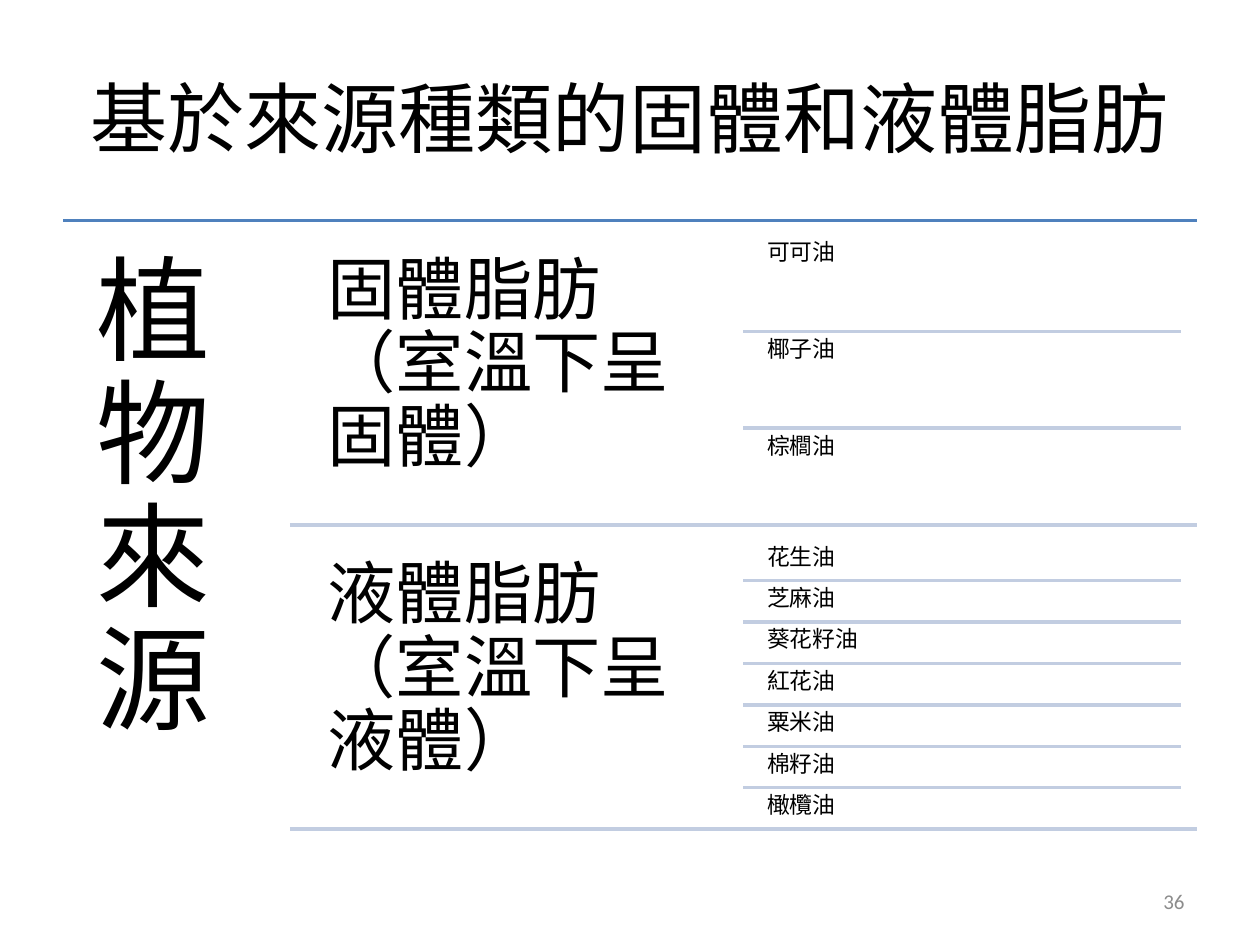
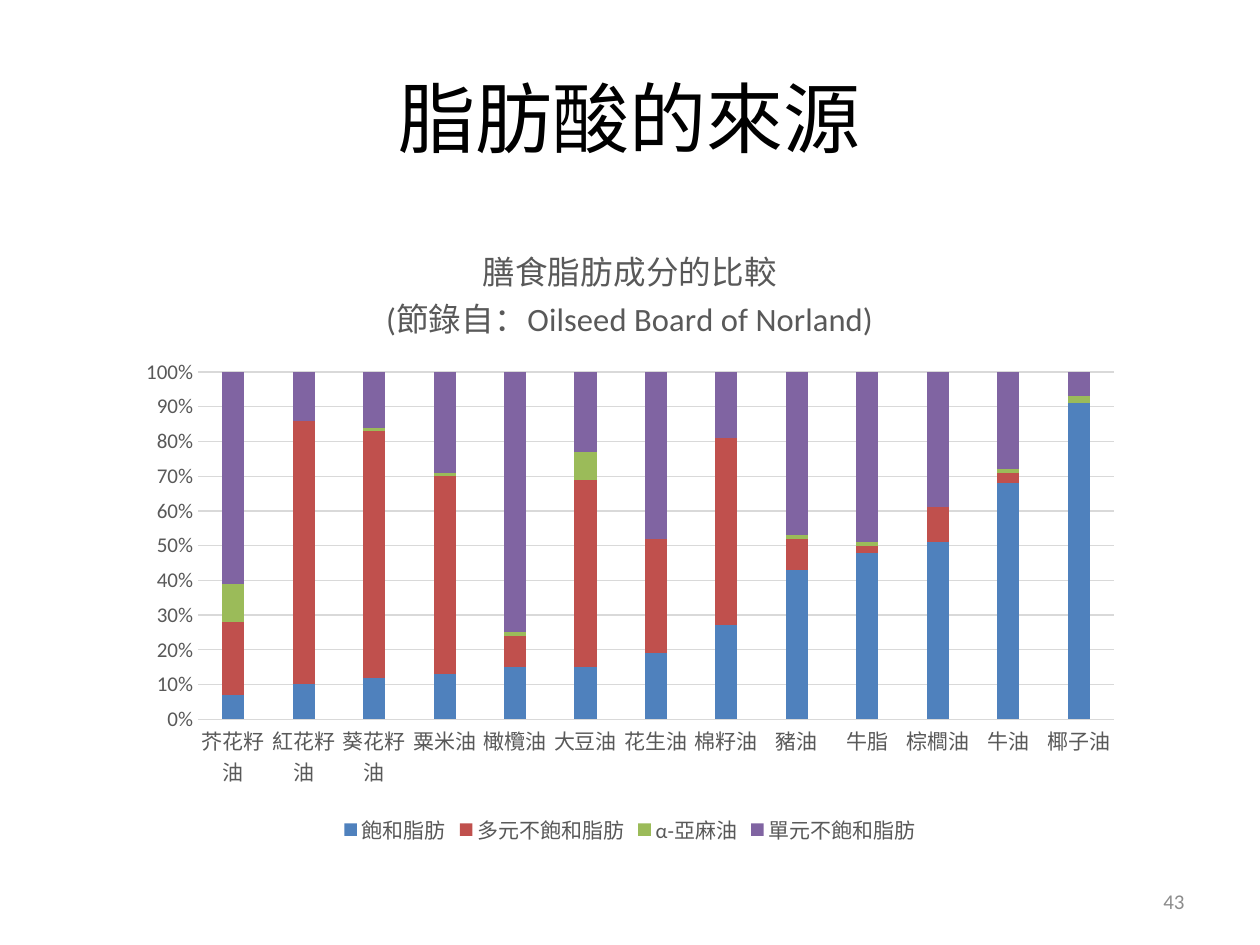
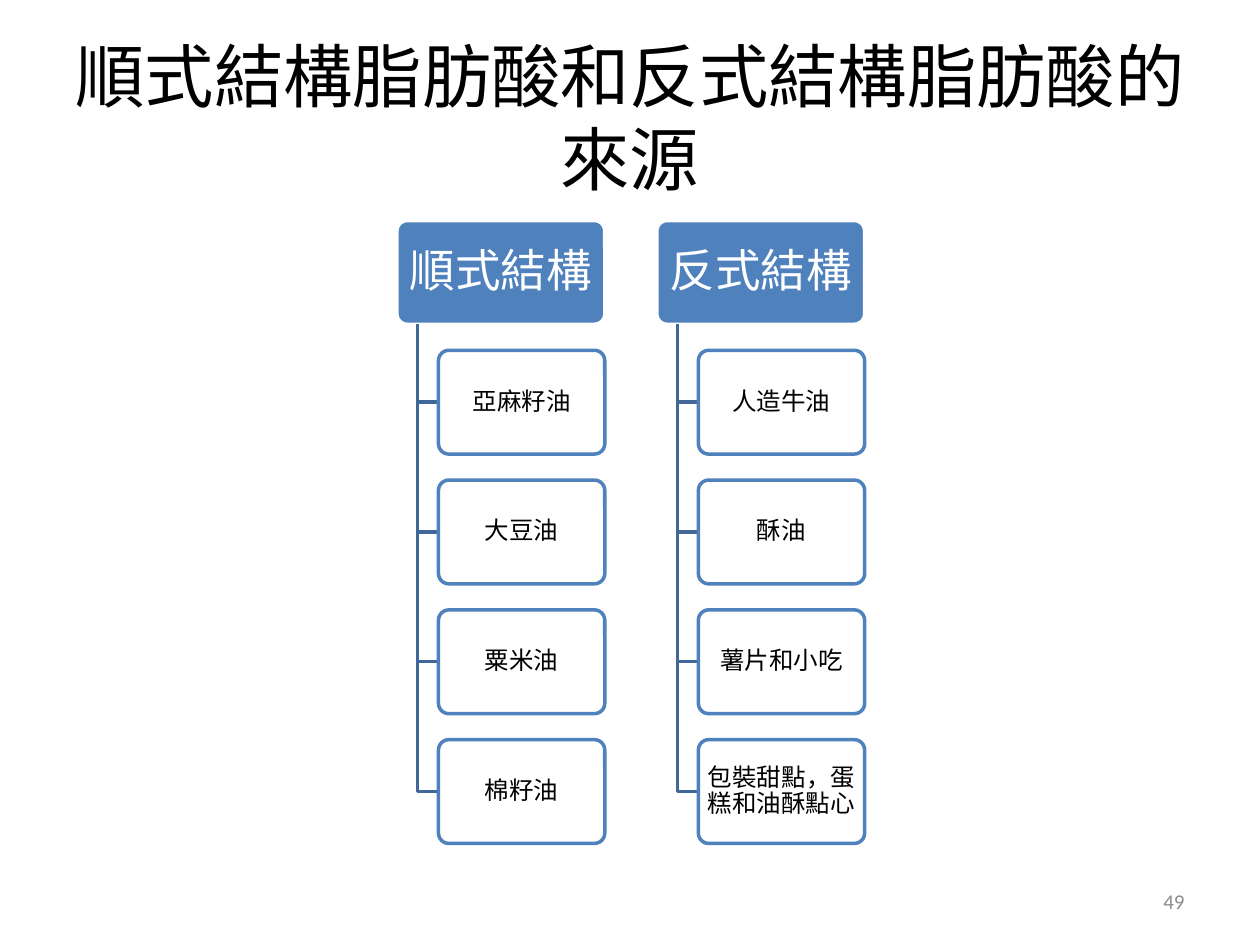
from lxml import etree
from pptx import Presentation
from pptx import util as u
from pptx.chart.data import CategoryChartData
from pptx.dml.color import RGBColor
from pptx.enum import chart as ch, shapes, text
from pptx.oxml.ns import qn

COLORS = {
    "text": "000000", "white": "FFFFFF", "blue": "4F81BD", "pale": "C2CDE1",
    "trunk": "3F6797", "number": "8C8C8C", "chart text": "595959", "grid": "D9D9D9",
    "red": "C0504D", "green": "9BBB59", "purple": "8064A2",
}
FONT = "Calibri"
COLS, ROWS = 100, 75  # cells of 0.1 inch on a 10 by 7.5 inch slide
LEFT, RIGHT, TOP = 5, 95, 17.5  # content margins in cells
LINE_WIDTH = 2
ALIGN, ANCHOR = text.PP_ALIGN, text.MSO_ANCHOR


def rgb(name):
    return RGBColor.from_string(COLORS[name])


def style_font(font, size, color):
    font.name, font.size = FONT, u.Pt(size)
    font.color.rgb = rgb(color)


def style_line(line, color, width=LINE_WIDTH):
    line.color.rgb = rgb(color)
    line.width = u.Pt(width)


class Deck:
    """Holds the presentation, its grid and the current slide."""

    def __init__(self):
        self.prs = Presentation()
        self.prs.slide_width, self.prs.slide_height = u.Inches(10), u.Inches(7.5)
        self.slide = None

    def x(self, cols):
        return round(self.prs.slide_width * cols / COLS)

    def y(self, rows):
        return round(self.prs.slide_height * rows / ROWS)

    def area(self, left, top, width, height):
        return self.x(left), self.y(top), self.x(width), self.y(height)

    def new_slide(self, title, number, title_size=44):
        self.slide = self.prs.slides.add_slide(self.prs.slide_layouts[6])
        self.label((LEFT, 3, RIGHT - LEFT, 12.5), title, title_size,
                   align=ALIGN.CENTER, anchor=ANCHOR.MIDDLE)
        self.label((71.7, 69.5, 23.3, 4), str(number), 12, "number",
                   align=ALIGN.RIGHT, anchor=ANCHOR.MIDDLE)

    def fill_text(self, sp, words, size, color, align, anchor, insets, spacing):
        """Insets are (horizontal, vertical) in inches."""
        tf = sp.text_frame
        tf.text, tf.word_wrap, tf.vertical_anchor = words, True, anchor
        tf.margin_left = tf.margin_right = u.Inches(insets[0])
        tf.margin_top = tf.margin_bottom = u.Inches(insets[1])
        p = tf.paragraphs[0]
        p.alignment, p.line_spacing = align, spacing
        for r in p.runs:
            style_font(r.font, size, color)

    def label(self, area, words, size, color="text", align=ALIGN.LEFT,
              anchor=ANCHOR.TOP, insets=(0.1, 0.05), spacing=1.0):
        sp = self.slide.shapes.add_textbox(*self.area(*area))
        self.fill_text(sp, words, size, color, align, anchor, insets, spacing)

    def rule(self, left, right, row, color="pale"):
        """Horizontal line."""
        line = self.slide.shapes.add_connector(
            shapes.MSO_CONNECTOR.STRAIGHT,
            self.x(left), self.y(row), self.x(right), self.y(row))
        style_line(line.line, color)
        etree.SubElement(line._element.spPr, qn("a:effectLst"))

    def box(self, area, words, size, color, fill, border, insets, opacity=100):
        sp = self.slide.shapes.add_shape(
            shapes.MSO_SHAPE.ROUNDED_RECTANGLE, *self.area(*area))
        sp.adjustments[0] = 0.1
        sp.shadow.inherit = False
        sp.fill.solid()
        sp.fill.fore_color.rgb = rgb(fill)
        if opacity < 100:
            tint = sp._element.spPr.find(qn("a:solidFill"))[0]
            etree.SubElement(tint, qn("a:alpha"), val=str(opacity * 1000))
        style_line(sp.line, border)
        self.fill_text(sp, words, size, color, ALIGN.CENTER, ANCHOR.MIDDLE, insets, 0.9)

    def elbow(self, left, top, right, bottom):
        """Branch that runs down and then right."""
        builder = self.slide.shapes.build_freeform(self.x(left), self.y(top))
        builder.add_line_segments(
            [(self.x(left), self.y(bottom)), (self.x(right), self.y(bottom))], close=False)
        sp = builder.convert_to_shape()
        sp.shadow.inherit = False
        sp.fill.background()
        style_line(sp.line, "trunk")

    def stacked_chart(self, area, title, cats, series):
        """Series maps a name to (colour, values)."""
        data = CategoryChartData()
        data.categories = cats
        for name, (_, values) in series.items():
            data.add_series(name, values)
        chart = self.slide.shapes.add_chart(
            ch.XL_CHART_TYPE.COLUMN_STACKED_100, *self.area(*area), data).chart
        style_font(chart.font, 12, "chart text")
        tf = chart.chart_title.text_frame
        tf.text = title
        for p in tf.paragraphs:
            p.font.bold = False
            for r in p.runs:
                style_font(r.font, 18.6, "chart text")
                r.font.bold = False
        chart.has_legend = True
        chart.legend.position = ch.XL_LEGEND_POSITION.BOTTOM
        chart.legend.include_in_layout = False
        style_font(chart.legend.font, 12, "chart text")
        for axis in (chart.category_axis, chart.value_axis):
            axis.major_tick_mark = axis.minor_tick_mark = ch.XL_TICK_MARK.NONE
            style_font(axis.tick_labels.font, 12, "chart text")
        style_line(chart.category_axis.format.line, "grid", 0.75)
        values = chart.value_axis
        values.format.line.fill.background()
        values.has_major_gridlines = True
        style_line(values.major_gridlines.format.line, "grid", 0.75)
        values.tick_labels.number_format = "0%"
        values.tick_labels.number_format_is_linked = False
        plot = chart.plots[0]
        plot.gap_width, plot.overlap, plot.vary_by_categories = 219, 100, False
        for s, (color, _) in zip(plot.series, series.values()):
            s.format.fill.solid()
            s.format.fill.fore_color.rgb = rgb(color)


def plant_sources(deck):
    deck.new_slide("基於來源種類的固體和液體脂肪", 36)
    deck.rule(LEFT, RIGHT, TOP, "blue")
    deck.label((LEFT, TOP, 18, 49.5), "植物來源", 65, insets=(0.27, 0.27), spacing=0.9)
    groups = {
        "固體脂肪（室溫下呈固體）": ["可可油", "椰子油", "棕櫚油"],
        "液體脂肪（室溫下呈液體）": ["花生油", "芝麻油", "葵花籽油", "紅花油",
                         "粟米油", "棉籽油", "橄欖油"],
    }
    gap, height, width = 1.15, 23, 34.6
    for i, (group, oils) in enumerate(groups.items()):
        top = TOP + gap + i * (height + gap)
        step = height / len(oils)
        deck.label((24.4, top, width, height), group, 39, insets=(0.16, 0.16), spacing=0.9)
        for j, oil in enumerate(oils):
            row = top + j * step
            deck.label((60.4, row, width, step), oil, 13, insets=(0.05, 0.05), spacing=0.9)
            if j:
                deck.rule(59, 93.7, row)
        deck.rule(23, RIGHT, top + height)


def fatty_acid_sources(deck):
    deck.new_slide("脂肪酸的來源", 43)
    cats = ["芥花籽油", "紅花籽油", "葵花籽油", "粟米油", "橄欖油", "大豆油", "花生油",
            "棉籽油", "豬油", "牛脂", "棕櫚油", "牛油", "椰子油"]
    series = {
        "飽和脂肪": ("blue", [7, 10, 12, 13, 15, 15, 19, 27, 43, 48, 51, 68, 91]),
        "多元不飽和脂肪": ("red", [21, 76, 71, 57, 9, 54, 33, 54, 9, 2, 10, 3, 0]),
        "α-亞麻油": ("green", [11, 0, 1, 1, 1, 8, 0, 0, 1, 1, 0, 1, 2]),
        "單元不飽和脂肪": ("purple", [61, 14, 16, 29, 75, 23, 48, 19, 47, 49, 39, 28, 7]),
    }
    deck.stacked_chart((10, TOP, 80, 50),
                       "膳食脂肪成分的比較\n(節錄自：Oilseed Board of Norland)", cats, series)


def cis_and_trans_sources(deck):
    deck.new_slide("順式結構脂肪酸和反式結構脂肪酸的來源", 49, 39.6)
    structures = {
        "順式結構": ["亞麻籽油", "大豆油", "粟米油", "棉籽油"],
        "反式結構": ["人造牛油", "酥油", "薯片和小吃", "包裝甜點，蛋糕和油酥點心"],
    }
    width, height, indent = 16.5, 8.24, 3.3
    for i, (structure, foods) in enumerate(structures.items()):
        left = 31.5 + i * width * 1.25
        deck.box((left, TOP, width, height), structure, 26, "white", "blue", "white",
                 (0.05, 0.04))
        for j, food in enumerate(foods, 1):
            top = TOP + j * height * 1.25
            deck.elbow(left + indent / 2, TOP + height, left + indent, top + height / 2)
            deck.box((left + indent, top, width - indent, height), food, 14, "text",
                     "white", "blue", (0.03, 0.02), opacity=90)


def main():
    deck = Deck()
    plant_sources(deck)
    fatty_acid_sources(deck)
    cis_and_trans_sources(deck)
    deck.prs.save("out.pptx")


if __name__ == "__main__":
    main()
